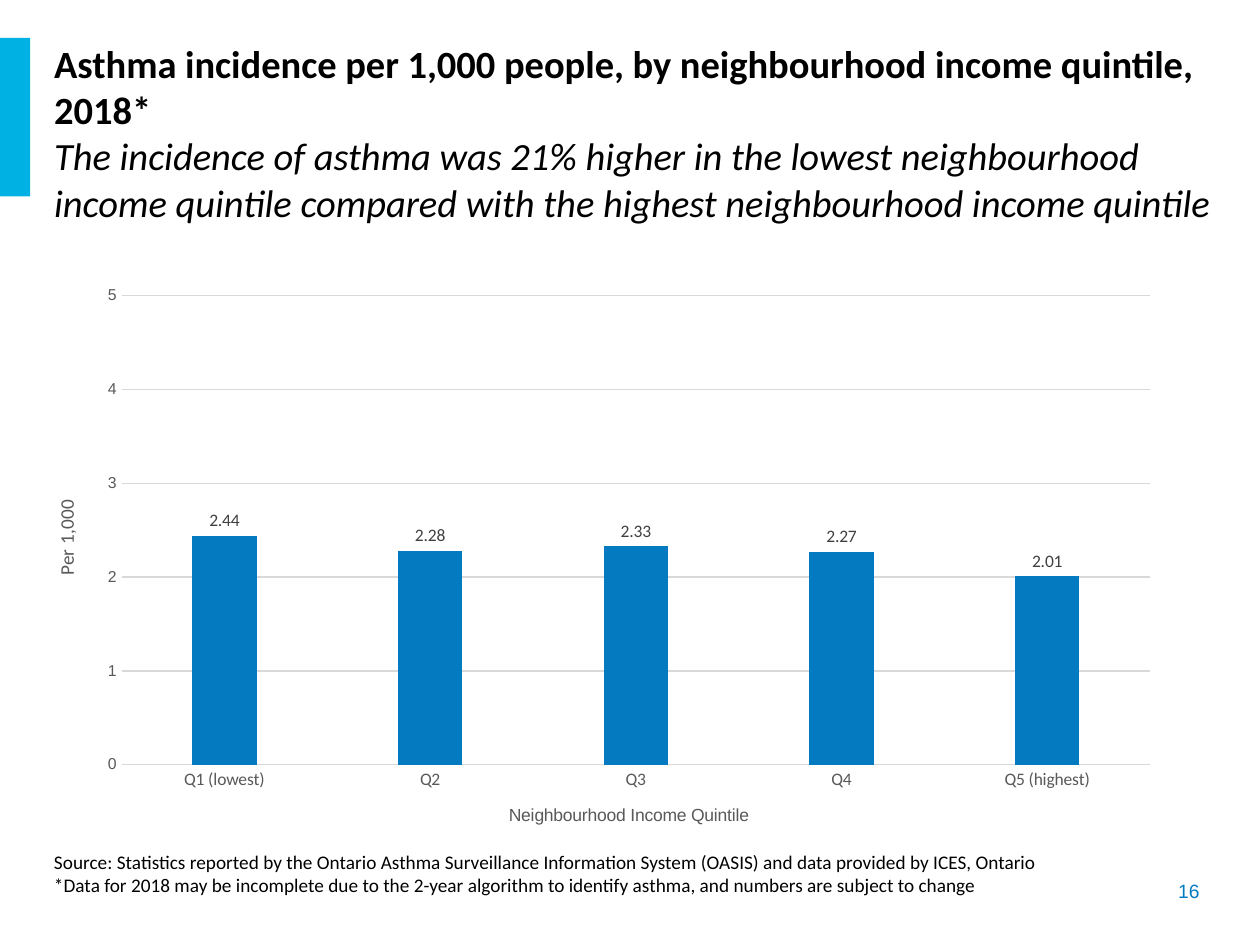
from dataclasses import dataclass

from lxml import etree
from pptx import Presentation
from pptx.chart.data import CategoryChartData
from pptx.dml.color import RGBColor
from pptx.enum.chart import XL_CHART_TYPE, XL_LABEL_POSITION, XL_TICK_MARK
from pptx.enum.shapes import MSO_SHAPE
from pptx.enum.text import MSO_ANCHOR, MSO_AUTO_SIZE, PP_ALIGN
from pptx.oxml.ns import qn
from pptx.util import Inches, Pt

COLUMN = XL_CHART_TYPE.COLUMN_CLUSTERED
ABOVE = XL_LABEL_POSITION.OUTSIDE_END
NO_TICK = XL_TICK_MARK.NONE
RECT = MSO_SHAPE.RECTANGLE
MIDDLE = MSO_ANCHOR.MIDDLE
FIXED = MSO_AUTO_SIZE.NONE
LEFT, RIGHT = PP_ALIGN.LEFT, PP_ALIGN.RIGHT

WIDE, HIGH = Inches(10), Inches(7.5)
BLUE, CYAN, BLACK = "047BC1", "00B2E3", "000000"
GREY, DARK, PALE = "595959", "404040", "D9D9D9"

HEAD = "Asthma incidence per 1,000 people, by neighbourhood income quintile, 2018*"
FINDING = ("The incidence of asthma was 21% higher in the lowest neighbourhood "
           "income quintile compared with the highest neighbourhood income quintile")
NOTES = ["Source: Statistics reported by the Ontario Asthma Surveillance Information "
         "System (OASIS) and data provided by ICES, Ontario",
         "*Data for 2018 may be incomplete due to the 2-year algorithm to identify "
         "asthma, and numbers are subject to change"]
RATES = {"Q1 (lowest)": 2.44, "Q2": 2.28, "Q3": 2.33, "Q4": 2.27, "Q5 (highest)": 2.01}


@dataclass(frozen=True)
class Box:
    """A place given in percent of the slide's width and height."""
    x: float
    y: float
    w: float
    h: float

    def area(self) -> tuple[int, int, int, int]:
        """Return left, top, width and height as lengths."""
        return (int(WIDE * self.x / 100), int(HIGH * self.y / 100),
                int(WIDE * self.w / 100), int(HIGH * self.h / 100))


@dataclass(frozen=True)
class Style:
    """The look of a piece of text."""
    size: float
    face: str = "Calibri"
    tint: str = BLACK
    bold: bool = False
    slant: bool = False


@dataclass(frozen=True)
class Note:
    """A text box with its lines, look and alignment."""
    box: Box
    lines: list[str]
    style: Style
    align: PP_ALIGN = LEFT


FOOTERS = [
    Note(Box(84.5, 92.4, 11.7, 3.87), ["16"], Style(11, "Arial", BLUE), RIGHT),
    Note(Box(3.3, 89.33, 91.8, 8.8), NOTES, Style(11)),
]


def paint(part, tint: str) -> None:
    """Give a fill one solid colour."""
    part.solid()
    part.fore_color.rgb = RGBColor.from_string(tint)


def dress(font, style: Style) -> None:
    """Apply a style to a font."""
    font.size, font.name = Pt(style.size), style.face
    font.bold, font.italic = style.bold, style.slant
    font.color.rgb = RGBColor.from_string(style.tint)


def rule(line) -> None:
    """Draw a thin pale line."""
    line.width = Pt(0.75)
    paint(line.fill, PALE)


def add_bar(slide, box: Box, tint: str) -> None:
    """Draw a plain accent bar."""
    bar = slide.shapes.add_shape(RECT, *box.area())
    bar.shadow.inherit = False
    paint(bar.fill, tint)
    bar.line.fill.background()


def set_title(slide, box: Box) -> None:
    """Write the bold heading and the slanted finding."""
    title = slide.shapes.title
    title.left, title.top, title.width, title.height = box.area()
    frame = title.text_frame
    frame.auto_size, frame.word_wrap = FIXED, True
    frame.vertical_anchor = MIDDLE
    frame.margin_bottom = Inches(0.33)
    para = frame.paragraphs[0]
    para.text = f"{HEAD}\v{FINDING}"
    para.alignment = LEFT
    styles = Style(22, bold=True), Style(22, slant=True)
    for run, style in zip(para.runs, styles):
        dress(run.font, style)


def add_note(slide, note: Note) -> None:
    """Draw a text box."""
    frame = slide.shapes.add_textbox(*note.box.area()).text_frame
    frame.word_wrap = True
    frame.text = "\n".join(note.lines)
    for para in frame.paragraphs:
        para.alignment = note.align
        dress(para.runs[0].font, note.style)


def set_axis(axis, name: str, head: Style, ticks: Style) -> None:
    """Name an axis and style its labels."""
    frame = axis.axis_title.text_frame
    frame.text = name
    dress(frame.paragraphs[0].runs[0].font, head)
    dress(axis.tick_labels.font, ticks)
    axis.major_tick_mark = axis.minor_tick_mark = NO_TICK


def set_plot(chart, **shares: float) -> None:
    """Fix the inner plot area in shares of the chart."""
    area = chart.plots[0]._element.getparent()
    for old in area.findall(qn("c:layout")):
        area.remove(old)
    layout = etree.Element(qn("c:layout"))
    area.insert(0, layout)
    manual = etree.SubElement(layout, qn("c:manualLayout"))
    values = {"layoutTarget": "inner", "xMode": "edge", "yMode": "edge", **shares}
    for tag, value in values.items():
        etree.SubElement(manual, qn(f"c:{tag}")).set("val", str(value))


def add_rates(slide, box: Box) -> None:
    """Draw the column chart of incidence by quintile."""
    data = CategoryChartData(number_format="0.00")
    data.categories = list(RATES)
    data.add_series("Series 1", list(RATES.values()))
    chart = slide.shapes.add_chart(COLUMN, *box.area(), data).chart
    chart.has_legend = chart.has_title = False
    dress(chart.font, Style(10, "Arial"))
    plot = chart.plots[0]
    plot.gap_width, plot.overlap, plot.vary_by_categories = 219, -27, False
    paint(plot.series[0].format.fill, BLUE)
    labels = plot.series[0].data_labels
    labels.show_value, labels.position = True, ABOVE
    dress(labels.font, Style(10, tint=DARK))

    cats, vals = chart.category_axis, chart.value_axis
    set_axis(cats, "Neighbourhood Income Quintile",
             Style(10, "Arial", GREY), Style(10, tint=GREY))
    rule(cats.format.line)
    set_axis(vals, "Per 1,000", Style(11, tint=GREY), Style(9, "Arial", GREY))
    vals.minimum_scale, vals.maximum_scale, vals.major_unit = 0, 5, 1
    vals.tick_labels.number_format = "0"
    vals.tick_labels.number_format_is_linked = False
    vals.format.line.fill.background()
    rule(vals.major_gridlines.format.line)
    set_plot(chart, x=0.07, y=0.05, w=0.9, h=0.82)


def main() -> None:
    """Build and save the slide."""
    deck = Presentation()
    deck.slide_width, deck.slide_height = WIDE, HIGH
    slide = deck.slides.add_slide(deck.slide_layouts[5])
    add_bar(slide, Box(0, 4, 2.4, 16.8), CYAN)
    set_title(slide, Box(3.3, 7.07, 94.3, 17.6))
    for note in FOOTERS:
        add_note(slide, note)
    add_rates(slide, Box(3.3, 28.27, 90.7, 60.53))
    deck.save("out.pptx")


if __name__ == "__main__":
    main()
